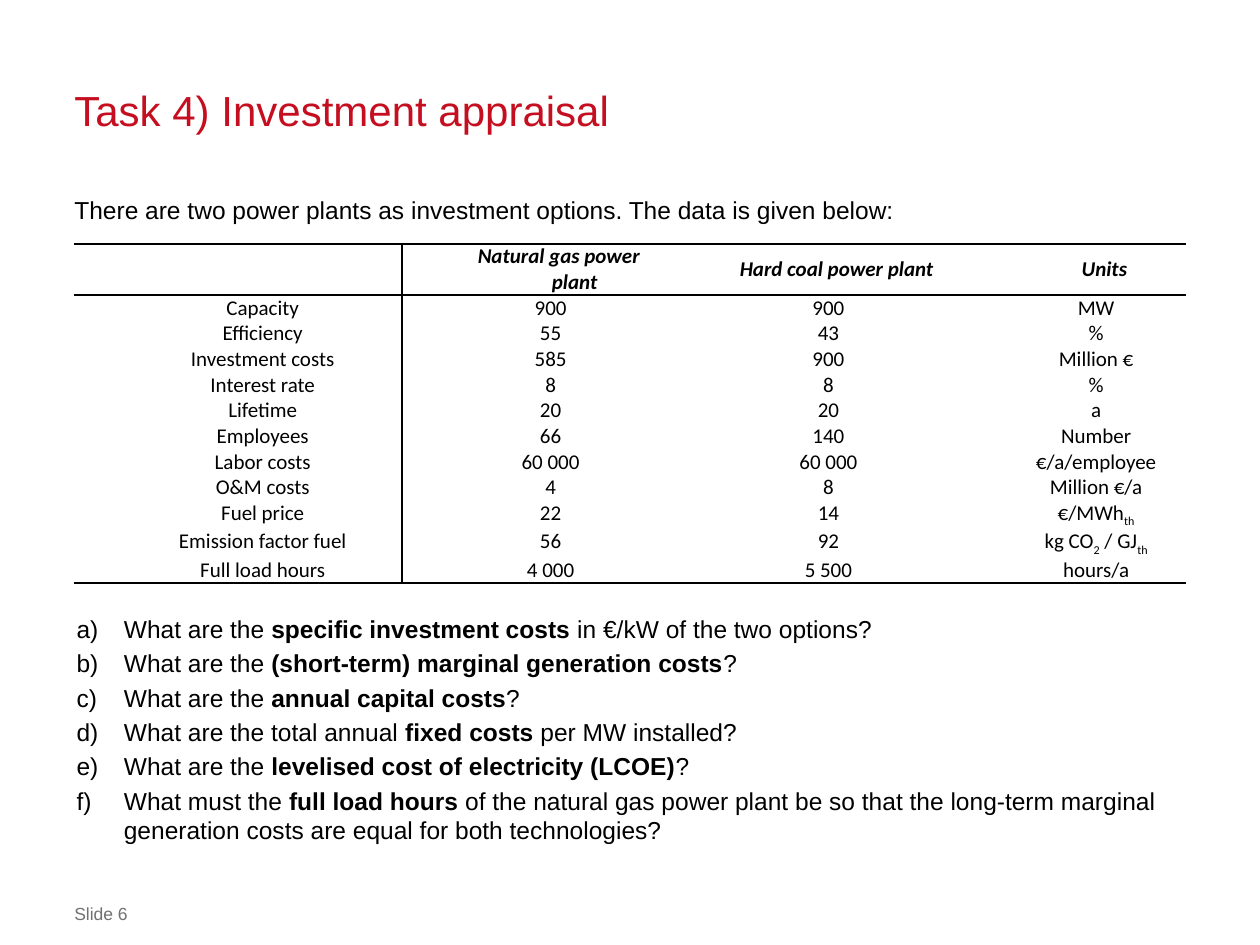
from lxml import etree
from pptx import Presentation
from pptx.dml.color import RGBColor
from pptx.enum import text
from pptx.oxml import ns
from pptx.util import Pt

RED = RGBColor(0xC5, 0x0E, 0x1F)
BLACK = RGBColor(0, 0, 0)
GREY = RGBColor(0x71, 0x71, 0x71)

# Content: "*" switches bold in questions, "_" switches subscript in cells
TITLE = "Task 4) Investment appraisal"
INTRO = "There are two power plants as investment options. The data is given below:"
PLANT_DATA = [
    ("", "Natural gas power plant", "Hard coal power plant", "Units"),
    ("Capacity", "900", "900", "MW"),
    ("Efficiency", "55", "43", "%"),
    ("Investment costs", "585", "900", "Million €"),
    ("Interest rate", "8", "8", "%"),
    ("Lifetime", "20", "20", "a"),
    ("Employees", "66", "140", "Number"),
    ("Labor costs", "60 000", "60 000", "€/a/employee"),
    ("O&M costs", "4", "8", "Million €/a"),
    ("Fuel price", "22", "14", "€/MWh_th_"),
    ("Emission factor fuel", "56", "92", "kg CO_2_ / GJ_th_"),
    ("Full load hours", "4 000", "5 500", "hours/a"),
]
QUESTIONS = [
    "What are the *specific investment costs* in €/kW of the two options?",
    "What are the *(short-term) marginal generation costs*?",
    "What are the *annual capital costs*?",
    "What are the total annual *fixed costs* per MW installed?",
    "What are the *levelised cost of electricity (LCOE)*?",
    "What must the *full load hours* of the natural gas power plant be so that "
    "the long-term marginal generation costs are equal for both technologies?",
]
PAGE_LABEL = "Slide 6"

# Layout
LEFT, WIDTH = 42.5, 635
COLUMN_WIDTHS = [187.2, 141.8, 175.7, 130.3]
HEADER_HEIGHT, ROW_HEIGHT = 29.3, 14.65
TABLE_TOP = 139.4
TABLE_GAP = 220  # room for the table between intro and questions
QUESTION_GAP = 2.8


def place(shape, top, height):
    shape.left, shape.top = Pt(LEFT), Pt(top)
    shape.width, shape.height = Pt(WIDTH), Pt(height)


def prepare_frame(frame):
    frame.margin_left = frame.margin_right = 0
    frame.margin_top = frame.margin_bottom = 0
    frame.word_wrap = True
    frame.auto_size = text.MSO_AUTO_SIZE.NONE
    frame.vertical_anchor = text.MSO_ANCHOR.TOP


def style(run, size, color, font="Arial"):
    run.font.size, run.font.name = Pt(size), font
    run.font.color.rgb = color


def add_marked_runs(paragraph, content, mark):
    """Add one run per part; return (run, is_marked) pairs."""
    pairs = []
    for i, part in enumerate(content.split(mark)):
        if part:
            run = paragraph.add_run()
            run.text = part
            pairs.append((run, i % 2 == 1))
    return pairs


def set_indent(paragraph, margin, indent, bullet=None, **attributes):
    properties = paragraph._p.get_or_add_pPr()
    properties.set("marL", str(Pt(margin)))
    properties.set("indent", str(Pt(indent)))
    if bullet:
        etree.SubElement(properties, ns.qn(bullet), **attributes)


def set_borders(cell, widths):
    """Draw the sides given in widths and clear the others."""
    properties = cell._tc.get_or_add_tcPr()
    for i, side in enumerate("LRTB"):
        line = etree.Element(ns.qn(f"a:ln{side}"))
        properties.insert(i, line)
        if side in widths:
            line.set("w", str(Pt(widths[side])))
            fill = etree.SubElement(line, ns.qn("a:solidFill"))
            etree.SubElement(fill, ns.qn("a:srgbClr"), val=str(BLACK))
        else:
            etree.SubElement(line, ns.qn("a:noFill"))


def cell_borders(row, column):
    last = len(PLANT_DATA) - 1
    widths = {}
    if row == 0:
        widths.update(T=1.5, B=1)
    if row == 1:
        widths["T"] = 1
    if row == last:
        widths["B"] = 1.5
    if column < 2:
        widths["RL"[column]] = 1
    return widths


def fill_cell(cell, content, is_header):
    cell.fill.background()
    cell.margin_left = cell.margin_top = cell.margin_bottom = 0
    cell.margin_right = Pt(5 if is_header else 14.4)
    if is_header:
        cell.vertical_anchor = text.MSO_ANCHOR.MIDDLE
    paragraph = cell.text_frame.paragraphs[0]
    paragraph.font.size = Pt(12)
    paragraph.alignment = text.PP_ALIGN.CENTER
    set_indent(paragraph, 60.5, -18)
    for run, is_subscript in add_marked_runs(paragraph, content, "_"):
        style(run, 12, BLACK, "Calibri")
        run.font.bold = run.font.italic = is_header
        if is_subscript:
            run.font._element.set("baseline", "-25000")


def main():
    prs = Presentation()
    prs.slide_width, prs.slide_height = Pt(720), Pt(540)
    slide = prs.slides.add_slide(prs.slide_layouts[1])

    # Title
    title = slide.shapes.title
    place(title, 47, 88)
    prepare_frame(title.text_frame)
    title.text_frame.text = TITLE
    heading = title.text_frame.paragraphs[0]
    heading.alignment = text.PP_ALIGN.LEFT
    heading.line_spacing = Pt(30)
    style(heading.runs[0], 24, RED)

    # Introduction and questions
    body = slide.placeholders[1]
    place(body, 106, 366)
    frame = body.text_frame
    prepare_frame(frame)
    frame.text = INTRO
    intro = frame.paragraphs[0]
    intro.line_spacing, intro.space_before = Pt(22), Pt(0)
    set_indent(intro, 0, 0, "a:buNone")
    style(intro.runs[0], 14, BLACK)
    for i, content in enumerate(QUESTIONS):
        question = frame.add_paragraph()
        question.space_before = Pt(QUESTION_GAP + (TABLE_GAP if i == 0 else 0))
        set_indent(question, 28.3, -27, "a:buAutoNum", type="alphaLcParenR")
        for run, is_bold in add_marked_runs(question, content, "*"):
            style(run, 14, BLACK)
            run.font.bold = is_bold

    # Plant data table
    heights = [HEADER_HEIGHT] + [ROW_HEIGHT] * (len(PLANT_DATA) - 1)
    table = slide.shapes.add_table(
        len(PLANT_DATA), len(COLUMN_WIDTHS), Pt(LEFT), Pt(TABLE_TOP),
        Pt(WIDTH), Pt(sum(heights))).table
    table.first_row = table.horz_banding = False
    for column, width in zip(table.columns, COLUMN_WIDTHS):
        column.width = Pt(width)
    for r, (values, height) in enumerate(zip(PLANT_DATA, heights)):
        table.rows[r].height = Pt(height)
        for c, value in enumerate(values):
            fill_cell(table.cell(r, c), value, r == 0)
            set_borders(table.cell(r, c), cell_borders(r, c))

    # Page label
    label = slide.shapes.add_textbox(0, 0, 0, 0)
    place(label, 516.2, 12.2)
    prepare_frame(label.text_frame)
    label.text_frame.text = PAGE_LABEL
    style(label.text_frame.paragraphs[0].runs[0], 10, GREY)

    prs.save("out.pptx")


if __name__ == "__main__":
    main()
